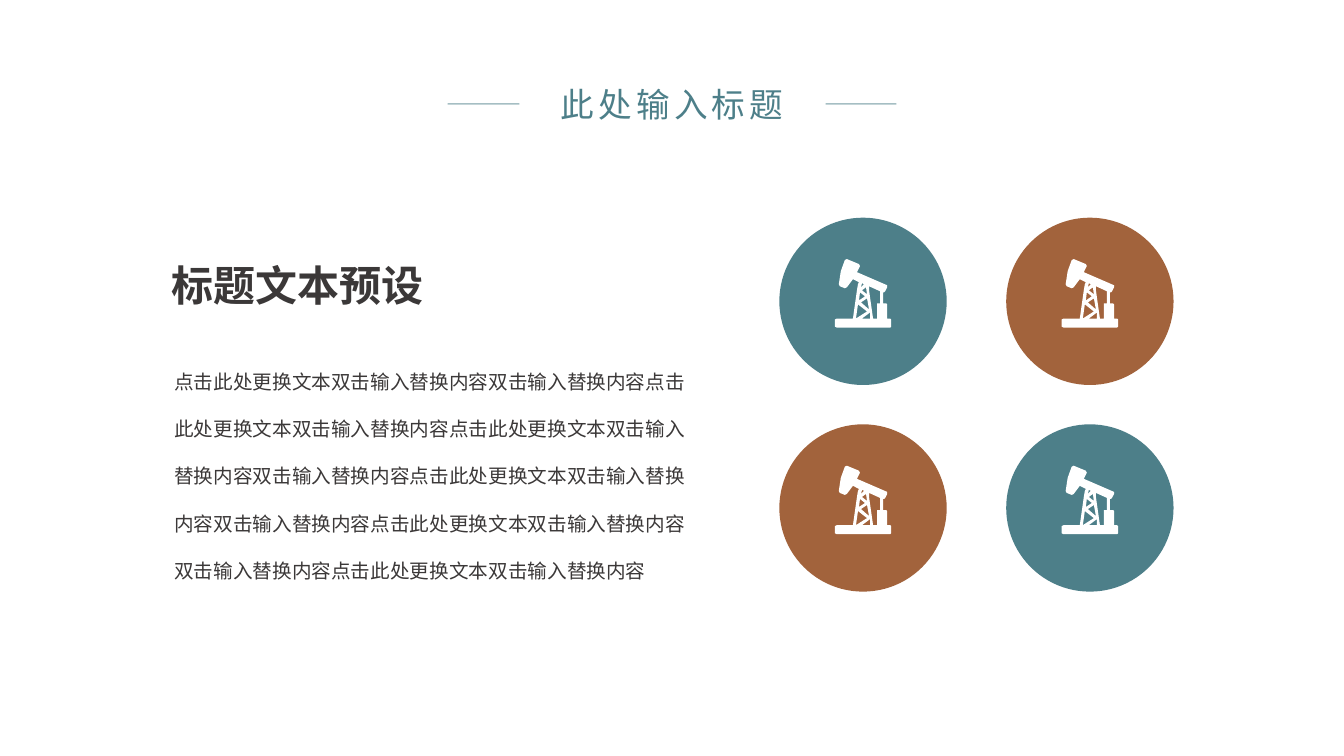
from lxml import etree
from pptx import Presentation
from pptx.dml.color import RGBColor
from pptx.enum.shapes import MSO_CONNECTOR, MSO_SHAPE
from pptx.enum.text import MSO_AUTO_SIZE, PP_ALIGN
from pptx.oxml.ns import qn
from pptx.util import Pt

STRAIGHT = MSO_CONNECTOR.STRAIGHT
OVAL = MSO_SHAPE.OVAL
GROW = MSO_AUTO_SIZE.SHAPE_TO_FIT_TEXT
LEFT, CENTER = PP_ALIGN.LEFT, PP_ALIGN.CENTER

PX = 9144  # 100 px to the inch
SIZE = 1333, 750
FONT = "Noto Sans CJK SC"
TEAL, RUST, DARK, WHITE = "4D7F89", "A2633C", "3B3838", "FFFFFF"

TITLE = "此处输入标题"
HEAD = "标题文本预设"
BODY = (
    "点击此处更换文本双击输入替换内容双击输入替换内容"
    "点击此处更换文本双击输入替换内容"
    "点击此处更换文本双击输入替换内容双击输入替换内容"
    "点击此处更换文本双击输入替换内容双击输入替换内容"
    "点击此处更换文本双击输入替换内容双击输入替换内容"
    "点击此处更换文本双击输入替换内容"
)

RULES = [(444, 515), (819, 889)]
RULE_Y = 103

DISCS = [[TEAL, RUST], [RUST, TEAL]]
DISC_X, DISC_Y, DISC = 773, 216, 166
STEP_X, STEP_Y = 225, 205
PUMP_X, PUMP_Y = 55, 41  # pump offset within its disc

# Pump jack: outer outline, then the openings in it
PUMP = [
    [(55, 59), (52, 59), (52, 45), (51, 44), (48, 44), (48, 33), (49, 33),
     (50, 32), (52, 28), (52, 26), (22, 13), (25, 7), (24, 5), (12, 0),
     (10, 1), (6, 12), (4, 25), (5, 27), (10, 29), (12, 28), (18, 20),
     (24, 23), (23, 25), (22, 31), (18, 59), (2, 59), (0, 60), (0, 67),
     (2, 68), (55, 68), (56, 67), (56, 60)],
    [(45, 44), (42, 44), (42, 59), (38, 59), (34, 31), (34, 27), (45, 32)],
    [(32, 35), (27, 31), (31, 28)],
    [(30, 37), (24, 41), (25, 33)],
    [(32, 39), (34, 50), (26, 43)],
    [(27, 59), (35, 53), (35, 59)],
    [(29, 25), (26, 28), (27, 24)],
    [(23, 45), (32, 52), (21, 59)],
]


def px(*nums):
    return [n * PX for n in nums]


def color(code):
    return RGBColor.from_string(code)


def paint(shape, code):
    shape.shadow.inherit = False
    shape.fill.solid()
    shape.fill.fore_color.rgb = color(code)
    shape.line.fill.background()


def add_text(shapes, text, box, size, code, bold=False, lead=1.0,
             align=LEFT, track=0):
    """Add a one-paragraph text box; track is letter spacing in points."""
    frame = shapes.add_textbox(*px(*box)).text_frame
    frame.word_wrap = True
    frame.auto_size = GROW
    para = frame.paragraphs[0]
    para.alignment = align
    para.line_spacing = lead
    run = para.add_run()
    run.text = text
    font = run.font
    font.name, font.size, font.bold = FONT, Pt(size), bold
    font.color.rgb = color(code)
    props = run._r.get_or_add_rPr()
    etree.SubElement(props, qn("a:ea"), typeface=FONT)
    if track:
        props.set("spc", str(track * 100))


def add_rule(shapes, start, end):
    rule = shapes.add_connector(STRAIGHT, *px(start, RULE_Y, end, RULE_Y))
    rule.line.width = Pt(1)
    rule.line.color.rgb = color(TEAL)
    props = rule._element.spPr
    tint = props.find(".//" + qn("a:srgbClr"))
    etree.SubElement(tint, qn("a:alpha"), val="50000")
    etree.SubElement(props, qn("a:effectLst"))


def add_pump(shapes, left, top):
    paths = [[(left + x, top + y) for x, y in path] for path in PUMP]
    pen = shapes.build_freeform(*paths[0][0], scale=PX)
    pen.add_line_segments(paths[0][1:], close=True)
    for path in paths[1:]:
        pen.move_to(*path[0])
        pen.add_line_segments(path[1:], close=True)
    paint(pen.convert_to_shape(), WHITE)


def main():
    deck = Presentation()
    deck.slide_width, deck.slide_height = px(*SIZE)
    shapes = deck.slides.add_slide(deck.slide_layouts[6]).shapes

    add_text(shapes, HEAD, (160, 238, 545, 70), 30, DARK, bold=True, lead=1.3)
    add_text(shapes, BODY, (163, 339, 532, 291), 14, DARK, lead=2.0)

    for row, codes in enumerate(DISCS):
        for col, code in enumerate(codes):
            left = DISC_X + col * STEP_X
            top = DISC_Y + row * STEP_Y
            paint(shapes.add_shape(OVAL, *px(left, top, DISC, DISC)), code)
            add_pump(shapes, left + PUMP_X, top + PUMP_Y)

    banner = shapes.add_group_shape().shapes
    for start, end in RULES:
        add_rule(banner, start, end)
    add_text(banner, TITLE, (519, 78, 295, 50), 24, TEAL,
             align=CENTER, track=3)

    deck.save("out.pptx")


if __name__ == "__main__":
    main()
